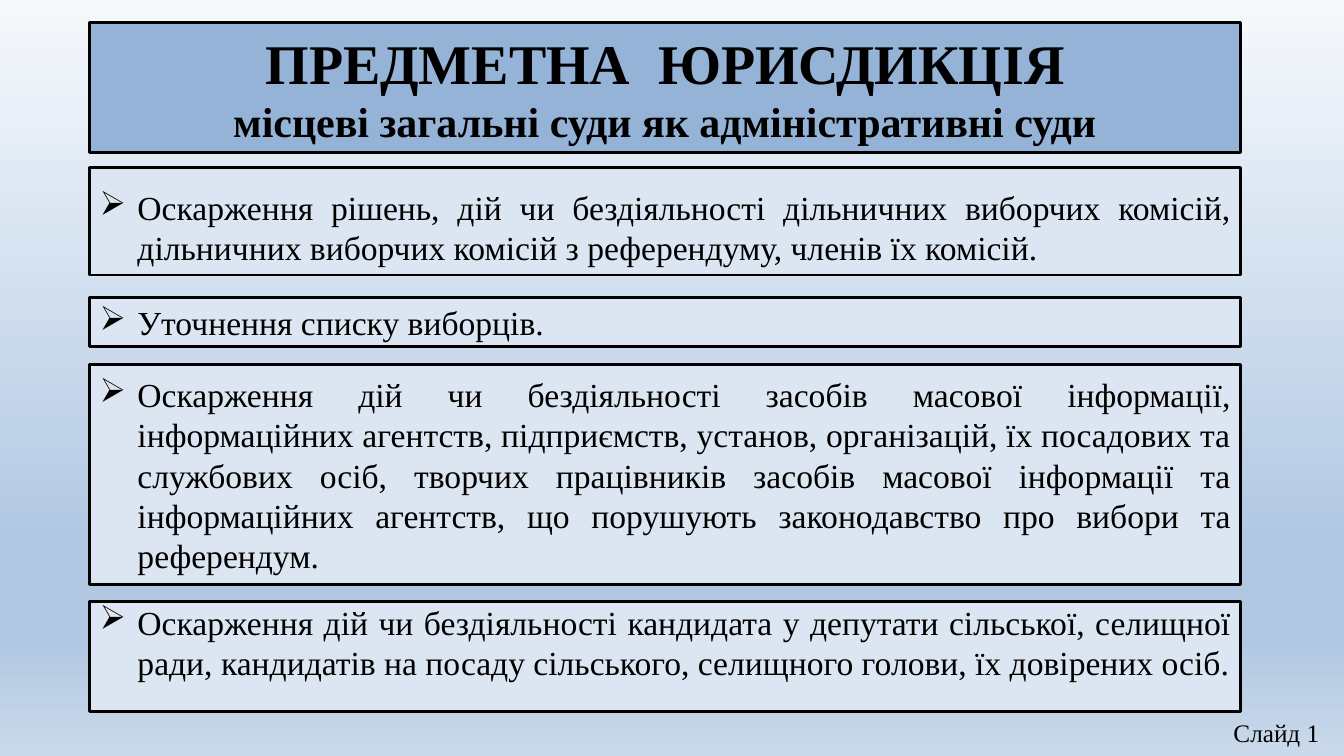
from copy import deepcopy
from dataclasses import dataclass

from pptx import Presentation
from pptx.dml.color import RGBColor
from pptx.enum.shapes import MSO_SHAPE as Shape
from pptx.enum.text import MSO_ANCHOR as Anchor, PP_ALIGN as Align
from pptx.oxml.ns import qn
from pptx.oxml.xmlchemy import OxmlElement as Element
from pptx.util import Pt


@dataclass(frozen=True)
class Theme:
    font: str = "Times New Roman"
    ink: str = "000000"
    head: str = "95B3D7"
    panel: str = "DCE6F2"
    sky: tuple = ((0, "F6F9FC"), (74, "B0C6E1"), (83, "B0C6E1"), (100, "CAD9EB"))
    title: int = 40
    sub: int = 30
    body: int = 24
    label: int = 18


THEME = Theme()
LEFT, WIDTH = 64.1, 822.2
INDENT = 27

# Top, height, anchor, top inset, alignment, text
CLAIMS = (
    (119.5, 77, Anchor.TOP, 14, Align.JUSTIFY,
     "Оскарження рішень, дій чи бездіяльності дільничних виборчих комісій, "
     "дільничних виборчих комісій з референдуму, членів їх комісій."),
    (212.4, 35.3, Anchor.MIDDLE, 3.6, Align.LEFT,
     "Уточнення списку виборців."),
    (260.6, 157, Anchor.MIDDLE, 3.6, Align.JUSTIFY,
     "Оскарження дій чи бездіяльності засобів масової інформації, "
     "інформаційних агентств, підприємств, установ, організацій, їх посадових "
     "та службових осіб, творчих працівників засобів масової інформації та "
     "інформаційних агентств, що порушують законодавство про вибори та "
     "референдум."),
    (429.8, 78.5, Anchor.TOP, 0, Align.JUSTIFY,
     "Оскарження дій чи бездіяльності кандидата у депутати сільської, селищної "
     "ради, кандидатів на посаду сільського, селищного голови, їх довірених осіб."),
)


def color(code):
    return RGBColor.from_string(code)


def style(para, size, bold=False, align=Align.LEFT):
    para.alignment = align
    for run in para.runs:
        font = run.font
        font.name, font.size, font.bold = THEME.font, Pt(size), bold
        font.color.rgb = color(THEME.ink)


def bullet(para):
    props = para._p.get_or_add_pPr()
    props.set("marL", str(Pt(INDENT)))
    props.set("indent", str(-Pt(INDENT)))
    mark = Element("a:buChar")
    mark.set("char", "➢")
    props.append(mark)


def panel(slide, top, height, fill, anchor=Anchor.MIDDLE, inset=3.6):
    box = slide.shapes.add_shape(
        Shape.RECTANGLE, Pt(LEFT), Pt(top), Pt(WIDTH), Pt(height))
    box.shadow.inherit = False
    box.fill.solid()
    box.fill.fore_color.rgb = color(fill)
    box.line.color.rgb = color(THEME.ink)
    box.line.width = Pt(2)
    frame = box.text_frame
    frame.word_wrap = True
    frame.vertical_anchor = anchor
    frame.margin_top = Pt(inset)
    return frame


def header(slide):
    frame = panel(slide, 15.8, 93, THEME.head)
    frame.text = ("ПРЕДМЕТНА  ЮРИСДИКЦІЯ\n"
                  "місцеві загальні суди як адміністративні суди")
    for para, size in zip(frame.paragraphs, (THEME.title, THEME.sub)):
        style(para, size, True, Align.CENTER)


def claim(slide, top, height, anchor, inset, align, text):
    para = panel(slide, top, height, THEME.panel, anchor, inset).paragraphs[0]
    para.text = text
    style(para, THEME.body, align=align)
    bullet(para)


def label(slide):
    box = slide.shapes.add_textbox(Pt(874), Pt(509), Pt(86), Pt(31))
    frame = box.text_frame
    frame.word_wrap = True
    frame.text = "Слайд 1"
    style(frame.paragraphs[0], THEME.label)


def backdrop(slide):
    fill = slide.background.fill
    fill.gradient()
    fill.gradient_angle = 270
    # Grow the default two stops to the theme's count
    stops = next(slide.element.iter(qn("a:gsLst")))
    while len(stops) < len(THEME.sky):
        stops.append(deepcopy(stops[0]))
    for stop, (place, code) in zip(fill.gradient_stops, THEME.sky):
        stop.position = place / 100
        stop.color.rgb = color(code)


def main():
    deck = Presentation()
    deck.slide_width, deck.slide_height = Pt(960), Pt(540)
    slide = deck.slides.add_slide(deck.slide_layouts[6])
    backdrop(slide)
    header(slide)
    for item in CLAIMS:
        claim(slide, *item)
    label(slide)
    deck.save("out.pptx")


if __name__ == "__main__":
    main()
